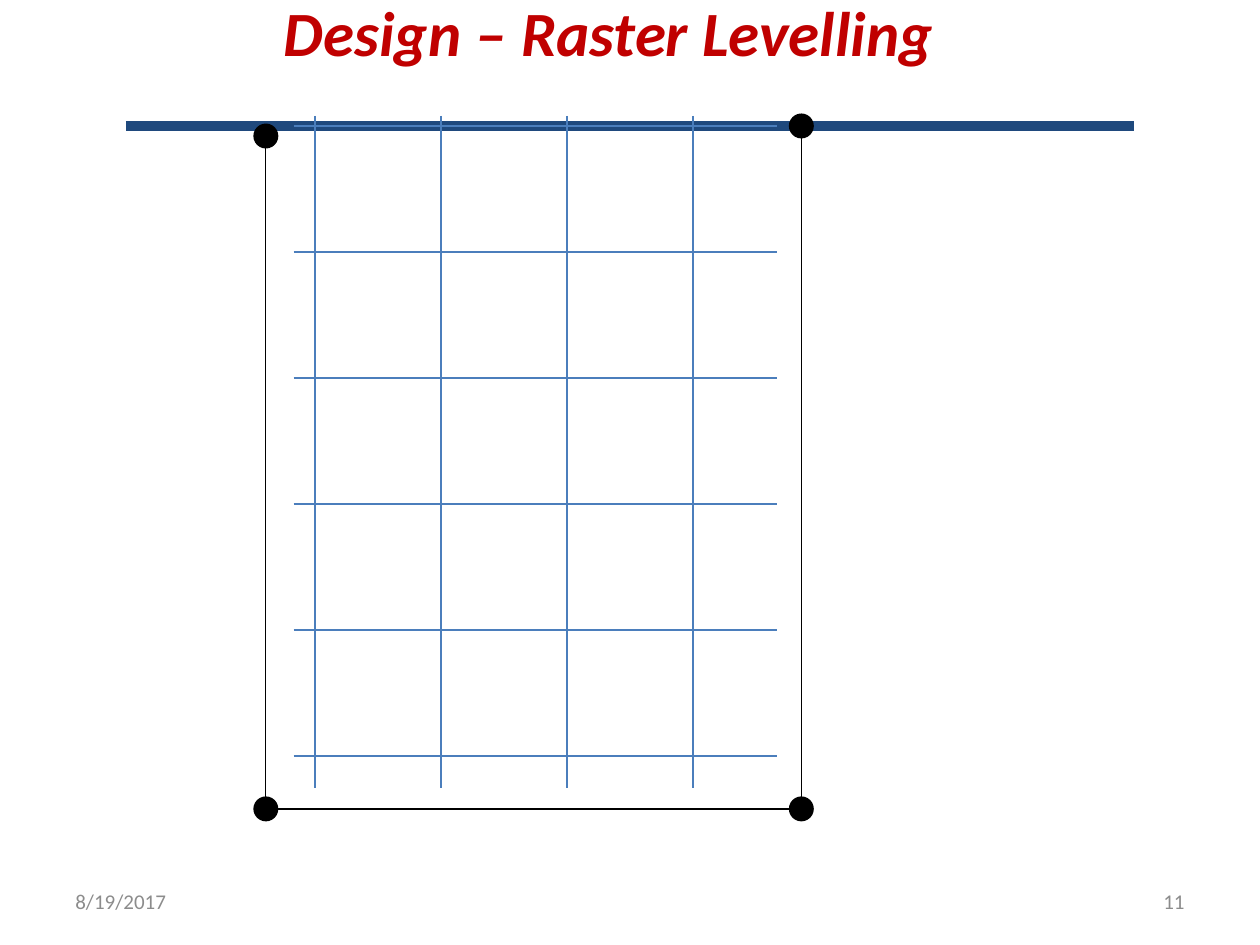
import pptx
import pptx.util
import pptx.dml.color
import pptx.enum.shapes
import pptx.enum.text
import pptx.oxml
import pptx.oxml.ns

Inches = pptx.util.Inches
Align = pptx.enum.text.PP_ALIGN
qn = pptx.oxml.ns.qn


def color(value):
    return pptx.dml.color.RGBColor.from_string(value)


def write(frame, text, size, fill, align=Align.LEFT, bold=False, italic=False):
    frame.word_wrap = True
    frame.vertical_anchor = pptx.enum.text.MSO_ANCHOR.MIDDLE
    para = frame.paragraphs[0]
    para.alignment = align
    span = para.add_run()
    span.text = text
    span.font.name = "Calibri"
    span.font.size = pptx.util.Pt(size)
    span.font.color.rgb = color(fill)
    span.font.bold = bold
    span.font.italic = italic


class Board:
    black = "000000"
    grid = "4B7EBC"
    ground = "1F497D"
    red = "C00000"
    gray = "8C8C8C"

    def __init__(self, deck):
        self.slide = deck.slides.add_slide(deck.slide_layouts[5])
        self.shapes = self.slide.shapes

    def outline(self, shape, stroke, width):
        shape.line.color.rgb = color(stroke)
        shape.line.width = pptx.util.Pt(width)

    def title(self, text, left, top, width, height):
        box = self.shapes.title
        box.left, box.top = Inches(left), Inches(top)
        box.width, box.height = Inches(width), Inches(height)
        write(box.text_frame, text, 36, self.red, Align.CENTER, bold=True, italic=True)

    def footer(self, text, left, align):
        box = self.shapes.add_textbox(Inches(left), Inches(6.95), Inches(2.33), Inches(0.4))
        write(box.text_frame, text, 12, self.gray, align)

    def line(self, start, end, stroke):
        line = self.shapes.add_connector(
            pptx.enum.shapes.MSO_CONNECTOR.STRAIGHT, *map(Inches, start + end)
        )
        self.outline(line, stroke, 0.75)
        pptx.oxml.ns.qn
        line._element.spPr.append(pptx.oxml.parse_xml(
            '<a:effectLst xmlns:a="http://schemas.openxmlformats.org/drawingml/2006/main"/>'
        ))

    def dot(self, x, y, size=0.17):
        dot = self.shapes.add_shape(
            pptx.enum.shapes.MSO_SHAPE.OVAL,
            Inches(x - size / 2), Inches(y - size / 2), Inches(size), Inches(size),
        )
        dot.shadow.inherit = False
        dot.fill.solid()
        dot.fill.fore_color.rgb = color(self.black)
        self.outline(dot, self.black, 2)

    def curve(self, points, stroke, width):
        builder = self.shapes.build_freeform(*points[0], scale=Inches(1))
        builder.add_line_segments(points[1:], close=False)
        curve = builder.convert_to_shape()
        curve.shadow.inherit = False
        curve.fill.background()
        self.outline(curve, stroke, width)
        segments = list(curve._element.iter(qn("a:lnTo")))
        for index in range(0, len(segments), 3):
            first, *others = segments[index:index + 3]
            bezier = first.makeelement(qn("a:cubicBezTo"))
            first.addprevious(bezier)
            for segment in (first, *others):
                bezier.append(segment[0])
                segment.getparent().remove(segment)


def main():
    deck = pptx.Presentation()
    deck.slide_width, deck.slide_height = Inches(10), Inches(7.5)
    board = Board(deck)
    board.title("Design – Raster Levelling", 0.33, -0.17, 9, 0.83)
    board.footer("8/19/2017", 0.5, Align.LEFT)
    board.footer("11", 7.17, Align.RIGHT)

    ground_points = [
        (1.03, 1.1),
        (1.45, 0.95), (1.87, 0.8), (2.52, 0.77),
        (3.17, 0.74), (4.2, 0.94), (4.93, 0.93),
        (5.66, 0.91), (6.24, 0.67), (6.88, 0.7),
        (7.53, 0.74), (8.47, 1.08), (8.82, 1.15),
        (9.17, 1.22), (8.94, 1.13), (8.96, 1.13),
    ]
    board.curve(ground_points, board.ground, 6)

    left, right, bottom = 2.11, 6.36, 6.42
    left_top, right_top, radius = 1.08, 1, 0.08
    for corner in [(left, left_top), (left, bottom), (right, bottom), (right, right_top)]:
        board.dot(*corner)
    board.line((left + radius, bottom), (right - radius, bottom), board.black)
    board.line((right, bottom - radius), (right, right_top + radius), board.black)
    board.line((left, left_top + radius), (left, bottom - radius), board.black)

    for row in range(6):
        board.line((2.33, 1 + row), (6.17, 1 + row), board.grid)
    for column in range(4):
        board.line((2.5 + column, 0.92), (2.5 + column, 6.25), board.grid)

    deck.save("out.pptx")


if __name__ == "__main__":
    main()
